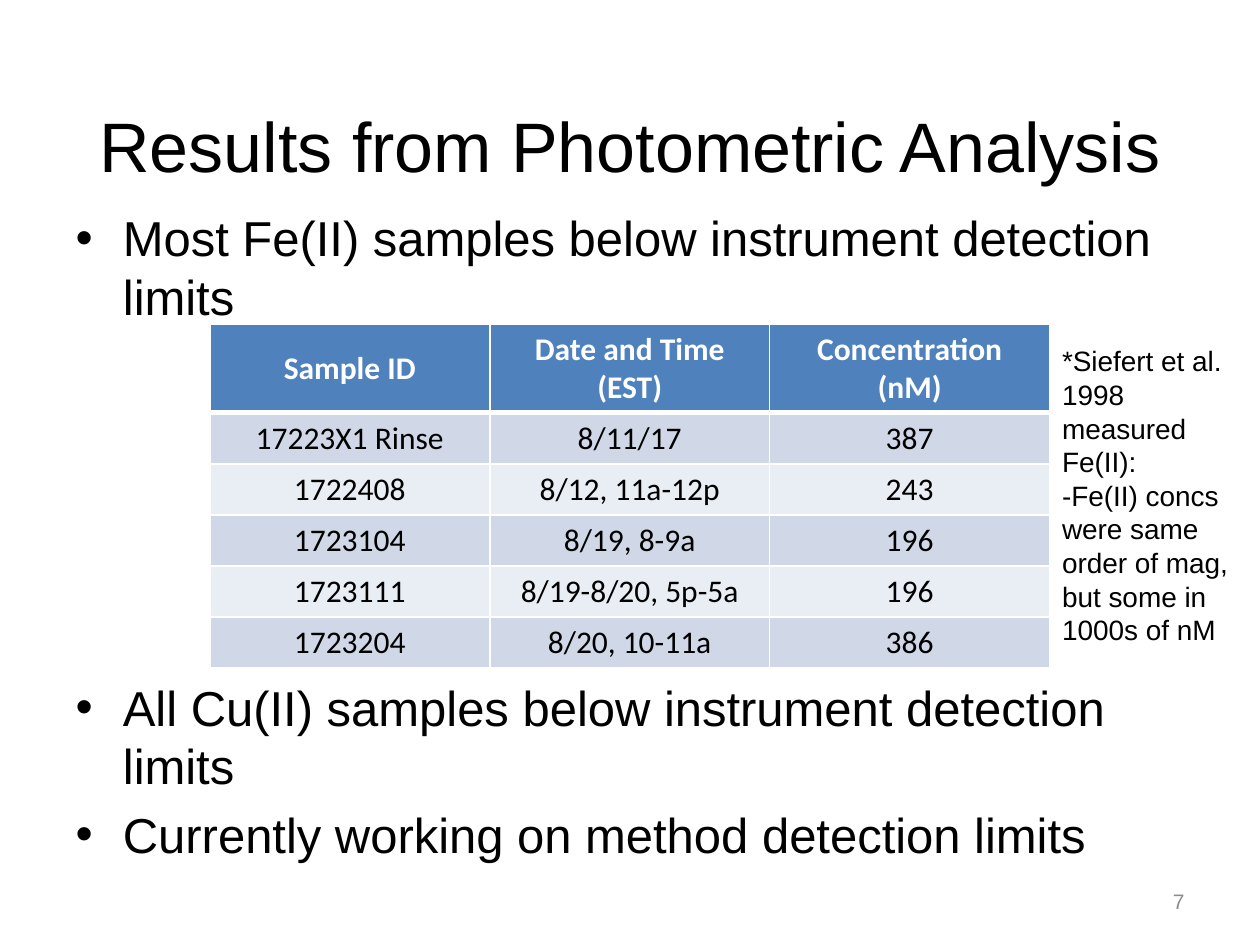
from dataclasses import dataclass
from lxml.etree import SubElement as Sub
from pptx import Presentation
from pptx.dml.color import RGBColor as RGB
from pptx.enum.text import MSO_ANCHOR as Anchor, MSO_AUTO_SIZE as Fit, PP_ALIGN as Align
from pptx.oxml.ns import qn
from pptx.util import Cm, Pt


@dataclass
class Theme:
    sans: str = "Arial"
    grid: str = "Calibri"
    black: str = "000000"
    white: str = "FFFFFF"
    gray: str = "8C8C8C"
    head: str = "4F81BD"
    bands: tuple = ("E9EDF4", "D0D8E8")
    title: int = 40
    body: int = 28
    cell: int = 18
    note: int = 16
    page: int = 12


look = Theme()


def write(frame, *lines, size, font=look.sans, color=look.black, bold=False,
          align=Align.LEFT, gaps=None):
    """Fill a text frame, one paragraph a line, with gaps before in points."""
    frame.word_wrap = True
    for i, line in enumerate(lines):
        para = frame.paragraphs[0] if i == 0 else frame.add_paragraph()
        para.alignment = align
        para.space_before = Pt(gaps[i] if gaps else 0)
        run = para.add_run()
        run.text = line
        run.font.size, run.font.name, run.font.bold = Pt(size), font, bold
        run.font.color.rgb = RGB.from_string(color)


def edge(cell, side, width):
    """Draw one white border of a table cell."""
    line = Sub(cell._tc.get_or_add_tcPr(), qn(f"a:ln{side}"), w=str(Pt(width)))
    fill = Sub(line, qn("a:solidFill"))
    Sub(fill, qn("a:srgbClr"), val=look.white)


deck = Presentation()
deck.slide_width, deck.slide_height = Cm(25.4), Cm(19.05)
slide = deck.slides.add_slide(deck.slide_layouts[1])
shapes = slide.shapes

# Title
title = shapes.title
title.left, title.top, title.width, title.height = Cm(1.27), Cm(1.32), Cm(22.86), Cm(3.18)
write(title.text_frame, "Results from Photometric Analysis",
      size=look.title, align=Align.CENTER)

# Bullets, with room for the table after the first
body = slide.placeholders[1]
body.left, body.top, body.width, body.height = Cm(1.27), Cm(4.06), Cm(22.86), Cm(12.57)
body.text_frame.auto_size = Fit.NONE
write(body.text_frame,
      "Most Fe(II) samples below instrument detection limits",
      "All Cu(II) samples below instrument detection limits",
      "Currently working on method detection limits",
      size=look.body, gaps=(0, 201, 5.6))

# Page number
page = shapes.add_textbox(Cm(18.2), Cm(17.65), Cm(5.93), Cm(1.02)).text_frame
page.vertical_anchor = Anchor.MIDDLE
write(page, "7", size=look.page, color=look.gray, align=Align.RIGHT)

# Table of concentrations
rows = (
    ("Sample ID", "Date and Time (EST)", "Concentration (nM)"),
    ("17223X1 Rinse", "8/11/17", "387"),
    ("1722408", "8/12, 11a-12p", "243"),
    ("1723104", "8/19, 8-9a", "196"),
    ("1723111", "8/19-8/20, 5p-5a", "196"),
    ("1723204", "8/20, 10-11a", "386"),
)
table = shapes.add_table(len(rows), 3, Cm(4.23), Cm(6.53), Cm(16.93), Cm(6.94)).table
for r, row in enumerate(rows):
    top = r == 0
    table.rows[r].height = Cm(1.79 if top else 1.03)
    for c, text in enumerate(row):
        cell = table.cell(r, c)
        cell.vertical_anchor = Anchor.MIDDLE
        write(cell.text_frame, text, size=look.cell, font=look.grid, bold=top,
              color=look.white if top else look.black, align=Align.CENTER)
        for side in "LRTB":
            thick = (top and side == "B") or (r == 1 and side == "T")
            edge(cell, side, 3 if thick else 1)
        cell.fill.solid()
        cell.fill.fore_color.rgb = RGB.from_string(look.head if top else look.bands[r % 2])

# Side note
note = shapes.add_textbox(Cm(21.16), Cm(6.81), Cm(4.06), Cm(6.4)).text_frame
write(note, "*Siefert et al. 1998 measured Fe(II):",
      "-Fe(II) concs were same order of mag, but some in 1000s of nM",
      size=look.note)

deck.save("out.pptx")
